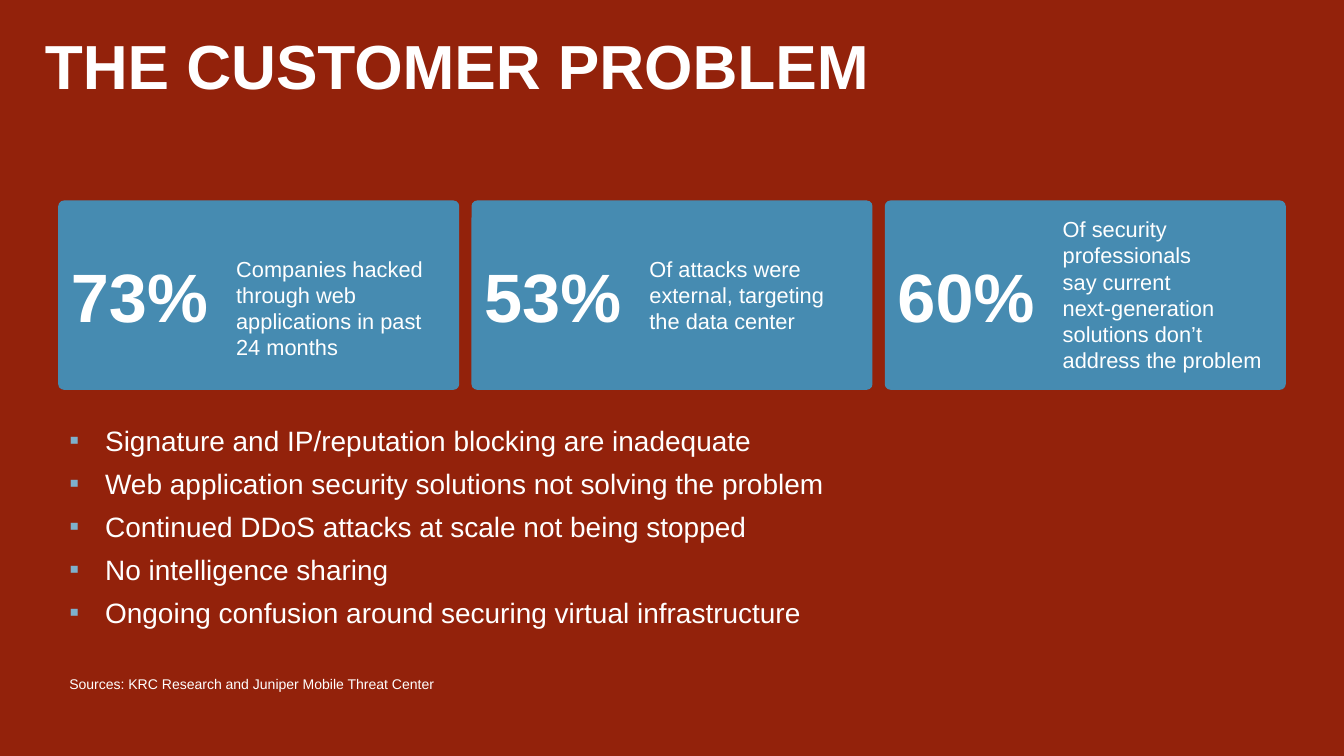
from copy import deepcopy

from lxml import etree
from pptx import Presentation
from pptx.dml.color import RGBColor
from pptx.enum.shapes import MSO_SHAPE
from pptx.enum.text import MSO_ANCHOR, MSO_AUTO_SIZE, PP_ALIGN
from pptx.oxml.ns import qn
from pptx.util import Inches, Pt

ROUNDED = MSO_SHAPE.ROUNDED_RECTANGLE
TOP, MIDDLE = MSO_ANCHOR.TOP, MSO_ANCHOR.MIDDLE
LEFT = PP_ALIGN.LEFT
NO_FIT = MSO_AUTO_SIZE.NONE
COLORS = {"background": "93220B", "card": "468BB1", "text": "FFFFFF", "bullet": "7EB0CC"}
TITLE_ONLY = 5


def write(shape, lines, size, bold=False, anchor=TOP, wrap=True, bullet=None):
    frame = shape.text_frame
    frame.word_wrap = wrap
    frame.auto_size = NO_FIT
    frame.vertical_anchor = anchor
    for index, line in enumerate(lines):
        para = frame.add_paragraph() if index else frame.paragraphs[0]
        para.text = line
        para.alignment = LEFT
        if bullet:
            para.space_after = Pt(6)
            props = para._p.get_or_add_pPr()
            props.set("marL", str(Inches(0.32)))
            props.set("indent", str(-Inches(0.32)))
            color = etree.SubElement(props, qn("a:buClr"))
            etree.SubElement(color, qn("a:srgbClr"), val=COLORS["bullet"])
            etree.SubElement(props, qn("a:buFont"), typeface="Arial")
            etree.SubElement(props, qn("a:buChar"), char=bullet)
        for span in para.runs:
            span.font.name = "Arial"
            span.font.size = Pt(size)
            span.font.bold = bold
            span.font.color.rgb = RGBColor.from_string(COLORS["text"])
        for line_break in para._p.findall(qn("a:br")):
            line_break.append(deepcopy(para.runs[0]._r.rPr))


deck = Presentation()
deck.slide_width, deck.slide_height = Inches(12), Inches(6.75)
page = deck.slides.add_slide(deck.slide_layouts[TITLE_ONLY])
page.background.fill.solid()
page.background.fill.fore_color.rgb = RGBColor.from_string(COLORS["background"])

title = page.shapes.title
title.left, title.top, title.width, title.height = map(Inches, (0.4, 0.37, 11.21, 0.59))
write(title, ["THE CUSTOMER PROBLEM"], 40, bold=True)
frame = title.text_frame
frame.margin_left = frame.margin_top = frame.margin_right = frame.margin_bottom = 0
frame.paragraphs[0].line_spacing = 0.8

statistics = [
    ("73%", "Companies hacked through web applications in past 24 months", 2.23, 1.04),
    ("53%", "Of attacks were external, targeting\nthe data center", 2.23, 0.81),
    ("60%", "Of security professionals\nsay current\nnext-generation solutions don’t address the problem", 1.88, 1.51),
]
for column, (figure, caption, top, height) in enumerate(statistics):
    left = 0.52 + 3.69 * column
    card = page.shapes.add_shape(ROUNDED, Inches(left), Inches(1.79), Inches(3.58), Inches(1.69))
    card.adjustments[0] = 0.03
    card.shadow.inherit = False
    card.fill.solid()
    card.fill.fore_color.rgb = RGBColor.from_string(COLORS["card"])
    card.line.fill.background()
    write(card, [figure], 44, bold=True, anchor=MIDDLE)
    box = page.shapes.add_textbox(Inches(left + 1.49), Inches(top), Inches(2.09), Inches(height))
    write(box, [caption], 14)

problems = [
    "Signature and IP/reputation blocking are inadequate",
    "Web application security solutions not solving the problem",
    "Continued DDoS attacks at scale not being stopped",
    "No intelligence sharing",
    "Ongoing confusion around securing virtual infrastructure",
]
box = page.shapes.add_textbox(Inches(0.52), Inches(3.73), Inches(10.95), Inches(1.95))
write(box, problems, 18, bullet="▪")

sources = page.shapes.add_textbox(Inches(0.52), Inches(5.98), Inches(3.49), Inches(0.25))
write(sources, ["Sources: KRC Research and Juniper Mobile Threat Center"], 9, wrap=False)

deck.save("out.pptx")
